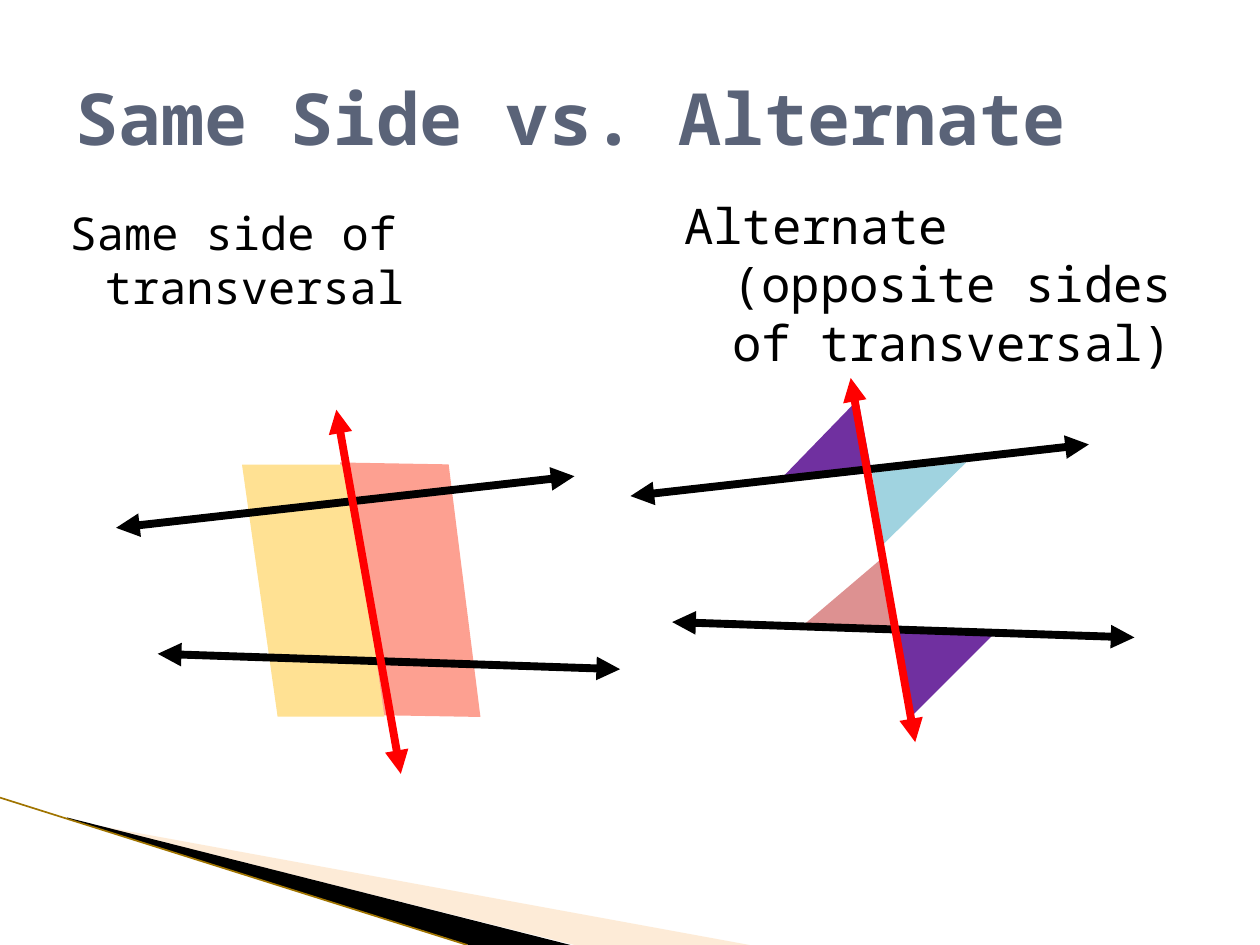
from lxml.etree import SubElement
from pptx import Presentation
from pptx.dml.color import RGBColor
from pptx.enum.shapes import MSO_CONNECTOR, MSO_SHAPE
from pptx.enum.text import MSO_ANCHOR, MSO_AUTO_SIZE, PP_ALIGN
from pptx.oxml.ns import qn
from pptx.util import Cm, Pt

FONT = "Noto Sans Mono"
BLACK, RED, PURPLE = "000000", "FF0000", "7030A0"


def paint(fmt, color):
    """Give a fill or line format one solid colour."""
    fill = getattr(fmt, "fill", fmt)
    fill.solid()
    fill.fore_color.rgb = RGBColor.from_string(color)


def plain(shape, color):
    shape.shadow.inherit = False
    paint(shape.fill, color)
    shape.line.fill.background()


def area(slide, points, color, alpha=None):
    """Draw a filled polygon, optionally translucent."""
    pts = [(Cm(x), Cm(y)) for x, y in points]
    pen = slide.shapes.build_freeform(*pts[0])
    pen.add_line_segments(pts[1:], close=True)
    shape = pen.convert_to_shape()
    plain(shape, color)
    if alpha:
        tone = shape.fill._xPr.find(".//" + qn("a:srgbClr"))
        SubElement(tone, qn("a:alpha"), val=str(alpha * 1000))


def slant(slide, box, color, turn=0):
    """Draw a parallelogram that leans to the left."""
    shape = slide.shapes.add_shape(MSO_SHAPE.PARALLELOGRAM, *map(Cm, box))
    plain(shape, color)
    shape.rotation = turn
    shape._element.spPr.xfrm.set("flipV", "1")


def line(slide, start, end, color, width=4.5, arrows=True):
    link = slide.shapes.add_connector(
        MSO_CONNECTOR.STRAIGHT, *map(Cm, (*start, *end)))
    paint(link.line, color)
    link.line.width = Pt(width)
    if arrows:
        stroke = link.line._get_or_add_ln()
        for tip in ("a:headEnd", "a:tailEnd"):
            SubElement(stroke, qn(tip), type="triangle")
    SubElement(link._element.spPr, qn("a:effectLst"))


def write(shape, box, text, size, color, bold=False, indent=None,
          anchor=MSO_ANCHOR.TOP):
    """Place a text shape and fill it with one run."""
    shape.left, shape.top, shape.width, shape.height = map(Cm, box)
    frame = shape.text_frame
    frame.word_wrap = True
    frame.auto_size = MSO_AUTO_SIZE.NONE
    frame.vertical_anchor = anchor
    para = frame.paragraphs[0]
    para.alignment = PP_ALIGN.LEFT
    para.space_before = Pt(0)
    if indent:
        left, first = indent
        props = para._p.get_or_add_pPr()
        props.set("marL", str(Cm(left)))
        props.set("indent", str(Cm(first)))
        SubElement(props, qn("a:buNone"))
    run = para.add_run()
    run.text = text
    run.font.name = FONT
    run.font.size = Pt(size)
    run.font.bold = bold
    run.font.color.rgb = RGBColor.from_string(color)


def cross(slide, dx=0, dy=0):
    """Draw two lines cut by a red transversal."""
    for start, end, color in (
        ((2.34, 10.64), (11.58, 9.6), BLACK),
        ((3.18, 13.18), (12.5, 13.49), BLACK),
        ((6.78, 8.26), (8.08, 15.6), RED),
    ):
        line(slide, (start[0] + dx, start[1] + dy),
             (end[0] + dx, end[1] + dy), color)


def main():
    deck = Presentation()
    deck.slide_width, deck.slide_height = Cm(25.4), Cm(19.05)
    slide = deck.slides.add_slide(deck.slide_layouts[1])

    # Corner sweep
    area(slide, [(1.4, 16.54), (15.11, 19.05), (11.58, 19.05), (1.4, 16.51)],
         "FCCF9B", 40)
    area(slide, [(1.35, 16.48), (11.5, 19.05), (9.45, 19.05), (1.37, 16.51)],
         BLACK)
    line(slide, (0, 16.08), (9.42, 19.05), "A07400", 0.95, arrows=False)

    # Sides of the left transversal
    slant(slide, (6.81, 9.35, 2.92, 5.08), "FDA091", 1)
    slant(slide, (4.88, 9.37, 2.87, 5.08), "FFE193")

    # Alternate angles on the right
    upper, lower = (17.58, 9.53), (17.98, 12.7)
    area(slide, [(19.48, 9.32), upper, (17.78, 11)], "A0D3E0")
    area(slide, [(17.81, 11.23), (16.08, 12.7), lower], "DD9191")
    area(slide, [lower, (20.12, 12.7), (18.42, 14.4)], PURPLE)
    area(slide, [(17.3, 8.05), (15.67, 9.73), upper], PURPLE)

    cross(slide)
    cross(slide, 10.37, -0.64)

    # Title and captions
    write(slide.shapes.title, (1.27, 0.76, 22.86, 3.18),
          "Same Side vs. Alternate", 41, "5A6378", bold=True,
          anchor=MSO_ANCHOR.MIDDLE)
    write(slide.placeholders[1], (0.84, 4.01, 12.27, 2.01),
          "Same side of transversal", 25.9, BLACK, indent=(1.02, -0.71))
    box = (13.54, 3.81, 10.59, 2.01)
    write(slide.shapes.add_textbox(*map(Cm, box)), box,
          "Alternate (opposite sides of transversal)", 28, BLACK,
          indent=(0.97, -0.97))

    deck.save("out.pptx")


if __name__ == "__main__":
    main()
